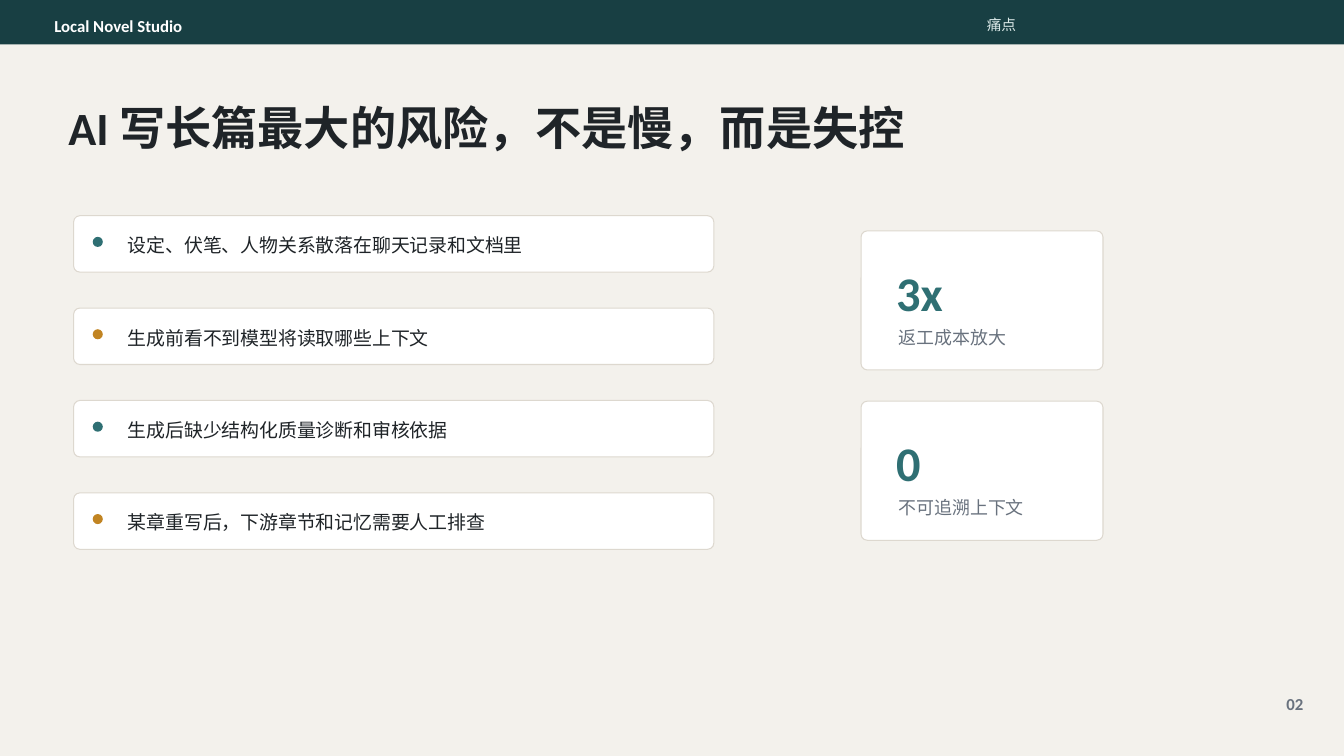
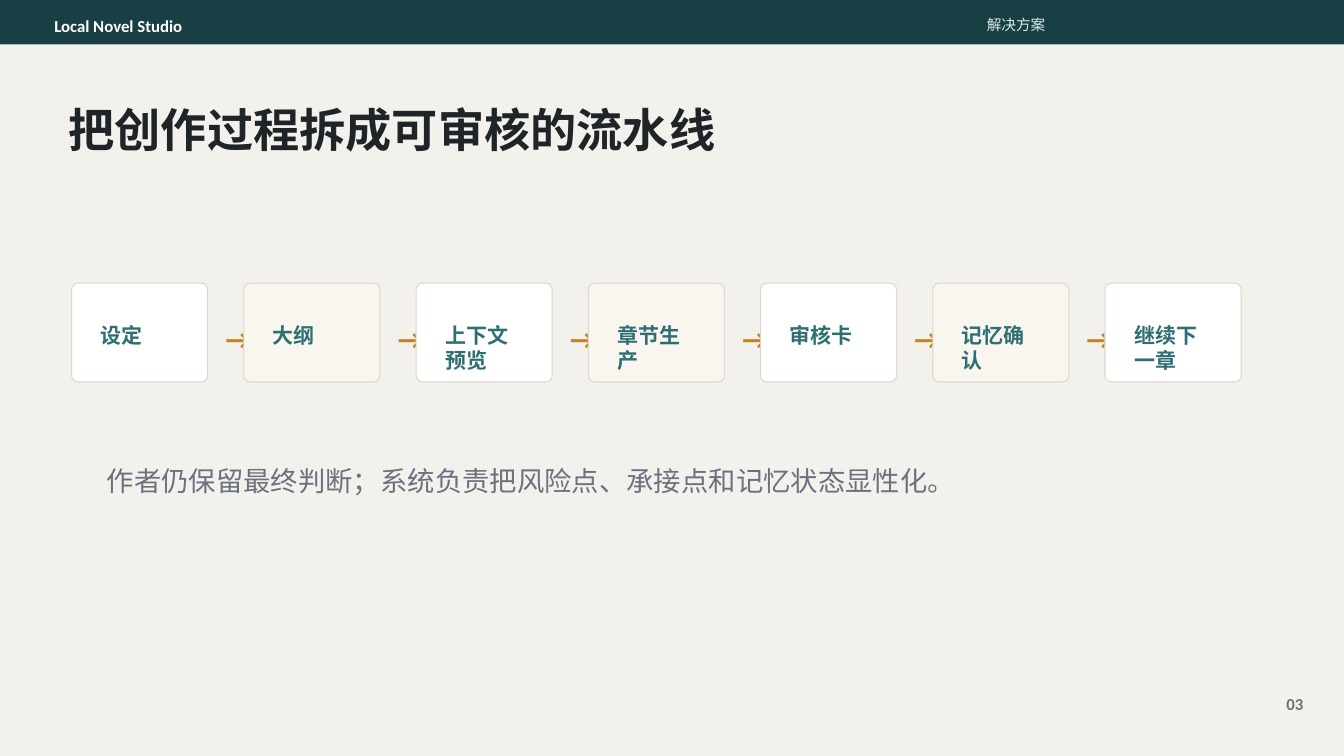
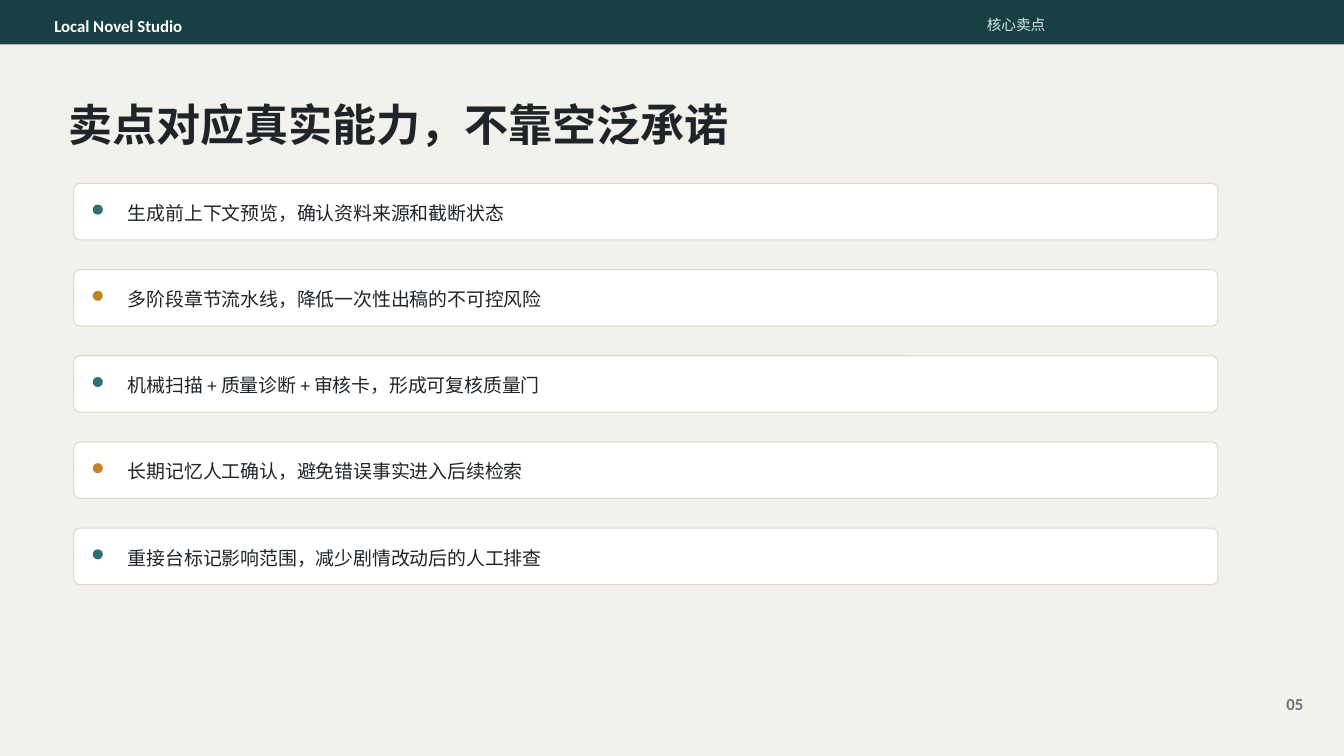
import pptx
import pptx.dml.color
import pptx.enum.shapes
import pptx.util

Inches = pptx.util.Inches
SHAPES = pptx.enum.shapes.MSO_SHAPE

FONT = "Calibri"
PAPER, WHITE, CREAM, BORDER = "F3F1EC", "FFFFFF", "F8F6EF", "DDD8CF"
BAND, BAND_LABEL = "183F43", "DBE9E8"
INK, GREY, TEAL, AMBER = "1F2428", "69727E", "2F6F73", "C18422"

SLIDE_WIDTH, SLIDE_HEIGHT = 13.33, 7.5
CORNER_RADIUS = 1 / 16


def colour(hex_text):
    """Turn a hex string into a colour."""
    return pptx.dml.color.RGBColor.from_string(hex_text)


def add_text(slide, text, left, top, width, height, size, text_colour, bold=False):
    """Add a wrapped one-paragraph text box."""
    box = slide.shapes.add_textbox(Inches(left), Inches(top), Inches(width), Inches(height))
    box.text_frame.word_wrap = True
    paragraph = box.text_frame.paragraphs[0]
    paragraph.text = text
    font = paragraph.font
    font.name, font.size, font.bold = FONT, pptx.util.Pt(size), bold
    font.color.rgb = colour(text_colour)


def add_shape(slide, kind, left, top, width, height, fill):
    """Add a flat filled shape without outline or shadow."""
    shape = slide.shapes.add_shape(kind, Inches(left), Inches(top), Inches(width), Inches(height))
    shape.shadow.inherit = False
    shape.fill.solid()
    shape.fill.fore_color.rgb = colour(fill)
    shape.line.fill.background()
    return shape


def add_card(slide, left, top, width, height, fill=WHITE):
    """Add a thinly outlined card with the shared corner radius."""
    card = add_shape(slide, SHAPES.ROUNDED_RECTANGLE, left, top, width, height, fill)
    card.adjustments[0] = CORNER_RADIUS / min(width, height)
    card.line.color.rgb = colour(BORDER)
    card.line.width = pptx.util.Pt(0.75)


def add_base_slide(presentation, section, number, title, title_box, title_size=33):
    """Add a slide with its background, top band, page number and title."""
    slide = presentation.slides.add_slide(presentation.slide_layouts[6])
    slide.background.fill.solid()
    slide.background.fill.fore_color.rgb = colour(PAPER)
    add_shape(slide, SHAPES.RECTANGLE, 0, 0, SLIDE_WIDTH, 0.44, BAND)
    add_text(slide, "Local Novel Studio", 0.44, 0.11, 2.92, 0.25, 12, WHITE, True)
    add_text(slide, section, 9.69, 0.11, 2.6, 0.25, 10.5, BAND_LABEL)
    add_text(slide, number, 12.66, 6.83, 0.4, 0.23, 12, GREY, True)
    add_text(slide, title, *title_box, title_size, INK, True)
    return slide


def add_bullet_cards(slide, points, left, top, width, height):
    """Spread one-line cards with alternating dots over the box."""
    card_height = 0.56
    pitch = (height - card_height) / (len(points) - 1)
    for index, point in enumerate(points):
        card_top = top + index * pitch
        add_card(slide, left, card_top, width, card_height)
        dot_colour = AMBER if index % 2 else TEAL
        add_shape(slide, SHAPES.OVAL, left + 0.19, card_top + 0.21, 0.1, 0.1, dot_colour)
        add_text(slide, point, left + 0.44, card_top + 0.13, width - 0.64, 0.38, 13.5, INK)


def add_metric_card(slide, value, label, left, top, width, height):
    """Add a card with a large value above its label."""
    add_card(slide, left, top, width, height)
    add_text(slide, value, left + 0.25, top + 0.27, width - 0.63, 0.5, 34.5, TEAL, True)
    add_text(slide, label, left + 0.27, top + 0.9, width - 0.63, 0.33, 12.8, GREY)


def add_pipeline(slide, steps, left, top, width, height):
    """Spread step cards over the box, each arrow tucked under the next card."""
    card_width = 1.35
    pitch = (width - card_width) / (len(steps) - 1)
    for index, step in enumerate(steps):
        card_left = left + index * pitch
        if index:
            add_text(slide, "→", card_left - 0.28, top + 0.34, 0.25, 0.31, 19.5, AMBER, True)
        add_card(slide, card_left, top, card_width, height, CREAM if index % 2 else WHITE)
        add_text(slide, step, card_left + 0.19, top + 0.34, 0.99, 0.31, 15, TEAL, True)


def build_pain_points(presentation):
    """Build the slide on the risks of long-form writing."""
    slide = add_base_slide(presentation, "痛点", "02", "AI 写长篇最大的风险，不是慢，而是失控",
                           (0.58, 0.94, 10.31, 0.75))
    points = ["设定、伏笔、人物关系散落在聊天记录和文档里", "生成前看不到模型将读取哪些上下文",
              "生成后缺少结构化质量诊断和审核依据", "某章重写后，下游章节和记忆需要人工排查"]
    add_bullet_cards(slide, points, 0.73, 2.14, 6.35, 3.31)
    metrics = [("3x", "返工成本放大"), ("0", "不可追溯上下文")]
    for index, (value, label) in enumerate(metrics):
        add_metric_card(slide, value, label, 8.54, 2.29 + index * 1.69, 2.4, 1.38)


def build_solution(presentation):
    """Build the slide on the reviewable pipeline."""
    slide = add_base_slide(presentation, "解决方案", "03", "把创作过程拆成可审核的流水线",
                           (0.58, 0.96, 9.38, 0.73))
    steps = ["设定", "大纲", "上下文预览", "章节生产", "审核卡", "记忆确认", "继续下一章"]
    add_pipeline(slide, steps, 0.71, 2.81, 11.6, 0.98)
    add_text(slide, "作者仍保留最终判断；系统负责把风险点、承接点和记忆状态显性化。",
             0.96, 4.56, 10.21, 0.54, 19.5, GREY)


def build_selling_points(presentation):
    """Build the slide on the core selling points."""
    slide = add_base_slide(presentation, "核心卖点", "05", "卖点对应真实能力，不靠空泛承诺",
                           (0.58, 0.92, 9.79, 0.58), 31.5)
    points = ["生成前上下文预览，确认资料来源和截断状态", "多阶段章节流水线，降低一次性出稿的不可控风险",
              "机械扫描 + 质量诊断 + 审核卡，形成可复核质量门", "长期记忆人工确认，避免错误事实进入后续检索",
              "重接台标记影响范围，减少剧情改动后的人工排查"]
    add_bullet_cards(slide, points, 0.73, 1.82, 11.35, 3.98)


def main():
    """Build and save the presentation."""
    presentation = pptx.Presentation()
    presentation.slide_width = Inches(SLIDE_WIDTH)
    presentation.slide_height = Inches(SLIDE_HEIGHT)
    build_pain_points(presentation)
    build_solution(presentation)
    build_selling_points(presentation)
    presentation.save("out.pptx")


if __name__ == "__main__":
    main()
